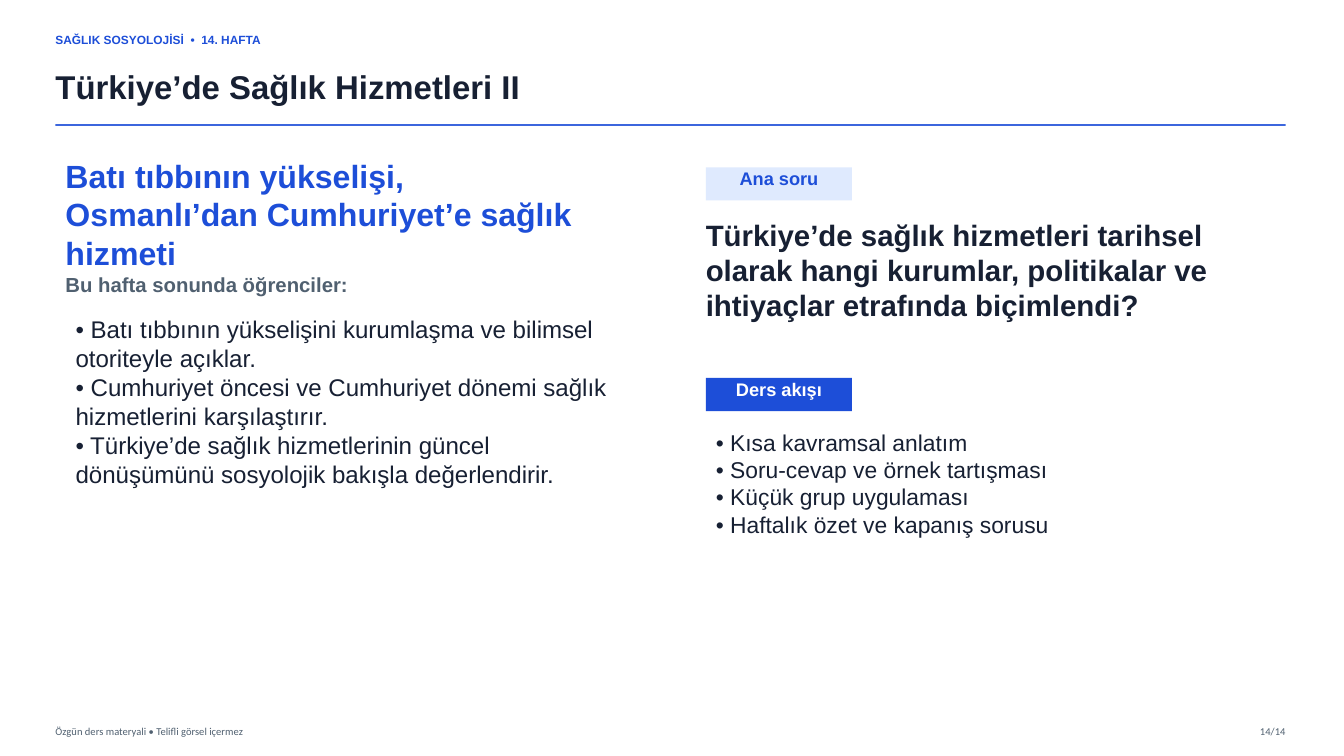
from lxml import etree
from pptx import Presentation
from pptx import util as u
from pptx.dml import color
from pptx.enum import shapes, text
from pptx.oxml import ns

HUES = {"blue": "1D4ED8", "ink": "172033", "gray": "506070", "pale": "DFEAFE", "white": "FFFFFF"}
CELL = u.Inches(0.1)
LEFT, RIGHT, MID = 5.5, 127.5, 70
MIDDLE = text.MSO_ANCHOR.MIDDLE
TOP = text.MSO_ANCHOR.TOP


def hue(name):
    return color.RGBColor.from_string(HUES[name])


def grid(*cells):
    return [round(cell * CELL) for cell in cells]


def write(shape, lines, size, tone, bold=False, face="Arial", align=text.PP_ALIGN.LEFT, anchor=TOP):
    frame = shape.text_frame
    frame.text = "\n".join(lines)
    frame.word_wrap = True
    frame.auto_size = text.MSO_AUTO_SIZE.NONE
    frame.vertical_anchor = anchor
    frame.margin_left = frame.margin_top = frame.margin_right = frame.margin_bottom = 0
    for para in frame.paragraphs:
        para.alignment = align
        for run in para.runs:
            font = run.font
            font.name, font.size, font.bold = face, u.Pt(size), bold
            font.color.rgb = hue(tone)


def label(slide, place, lines, size, tone, **style):
    write(slide.shapes.add_textbox(*grid(*place)), lines, size, tone, **style)


def title(slide, place, words):
    head = slide.shapes.title
    head.left, head.top, head.width, head.height = grid(*place)
    write(head, [words], 23.5, "ink", bold=True, anchor=MIDDLE)


def rule(slide, row):
    line = slide.shapes.add_connector(shapes.MSO_CONNECTOR.STRAIGHT, *grid(LEFT, row, RIGHT, row))
    line.line.width = u.Pt(1.2)
    line.line.color.rgb = hue("blue")
    tint = line.line._ln.find(".//" + ns.qn("a:srgbClr"))
    etree.SubElement(tint, ns.qn("a:alpha"), val="85000")
    etree.SubElement(line._element.spPr, ns.qn("a:effectLst"))


def chip(slide, row, words, fill, tone):
    tag = slide.shapes.add_shape(shapes.MSO_SHAPE.RECTANGLE, *grid(MID, row, 14.5, 3.3))
    tag.shadow.inherit = False
    tag.fill.solid()
    tag.fill.fore_color.rgb = hue(fill)
    tag.line.fill.background()
    write(tag, [words], 13, tone, bold=True, align=text.PP_ALIGN.CENTER)


def bullets(slide, place, items, size):
    label(slide, place, ["• " + item for item in items], size, "ink")


def footer(slide):
    small = dict(face="Calibri", anchor=MIDDLE)
    label(slide, (LEFT, 71.4, 60, 2.2), ["Özgün ders materyali • Telifli görsel içermez"], 7.5, "gray", **small)
    label(slide, (RIGHT - 6.5, 71.4, 6.5, 2.2), ["14/14"], 7.5, "gray", align=text.PP_ALIGN.RIGHT, **small)


def goals(slide):
    edge = LEFT + 1
    label(slide, (edge, 15.5, 53, 9.5),
          ["Batı tıbbının yükselişi, Osmanlı’dan Cumhuriyet’e sağlık hizmeti"], 22.9, "blue", bold=True)
    label(slide, (edge, 27, 49, 3), ["Bu hafta sonunda öğrenciler:"], 14.5, "gray", bold=True)
    bullets(slide, (edge + 1, 31.2, 55, 20), [
        "Batı tıbbının yükselişini kurumlaşma ve bilimsel otoriteyle açıklar.",
        "Cumhuriyet öncesi ve Cumhuriyet dönemi sağlık hizmetlerini karşılaştırır.",
        "Türkiye’de sağlık hizmetlerinin güncel dönüşümünü sosyolojik bakışla değerlendirir.",
    ], 17.2)


def plan(slide):
    chip(slide, 16.6, "Ana soru", "pale", "blue")
    label(slide, (MID, 21.5, 53.5, 11),
          ["Türkiye’de sağlık hizmetleri tarihsel olarak hangi kurumlar, politikalar ve "
           "ihtiyaçlar etrafında biçimlendi?"], 21, "ink", bold=True)
    chip(slide, 37.5, "Ders akışı", "blue", "white")
    bullets(slide, (MID + 1, 42.5, 53.5, 15.5), [
        "Kısa kavramsal anlatım",
        "Soru-cevap ve örnek tartışması",
        "Küçük grup uygulaması",
        "Haftalık özet ve kapanış sorusu",
    ], 16.3)


def main():
    deck = Presentation()
    deck.slide_width, deck.slide_height = u.Inches(13.33), u.Inches(7.5)
    slide = deck.slides.add_slide(deck.slide_layouts.get_by_name("Title Only"))
    slide.background.fill.solid()
    slide.background.fill.fore_color.rgb = hue("white")
    label(slide, (LEFT, 2.5, 36, 2.8), ["SAĞLIK SOSYOLOJİSİ  •  14. HAFTA"], 8.5, "blue",
          bold=True, anchor=MIDDLE)
    title(slide, (LEFT, 5.8, 119.5, 5.5), "Türkiye’de Sağlık Hizmetleri II")
    rule(slide, 12.4)
    goals(slide)
    plan(slide)
    footer(slide)
    deck.save("out.pptx")


if __name__ == "__main__":
    main()
